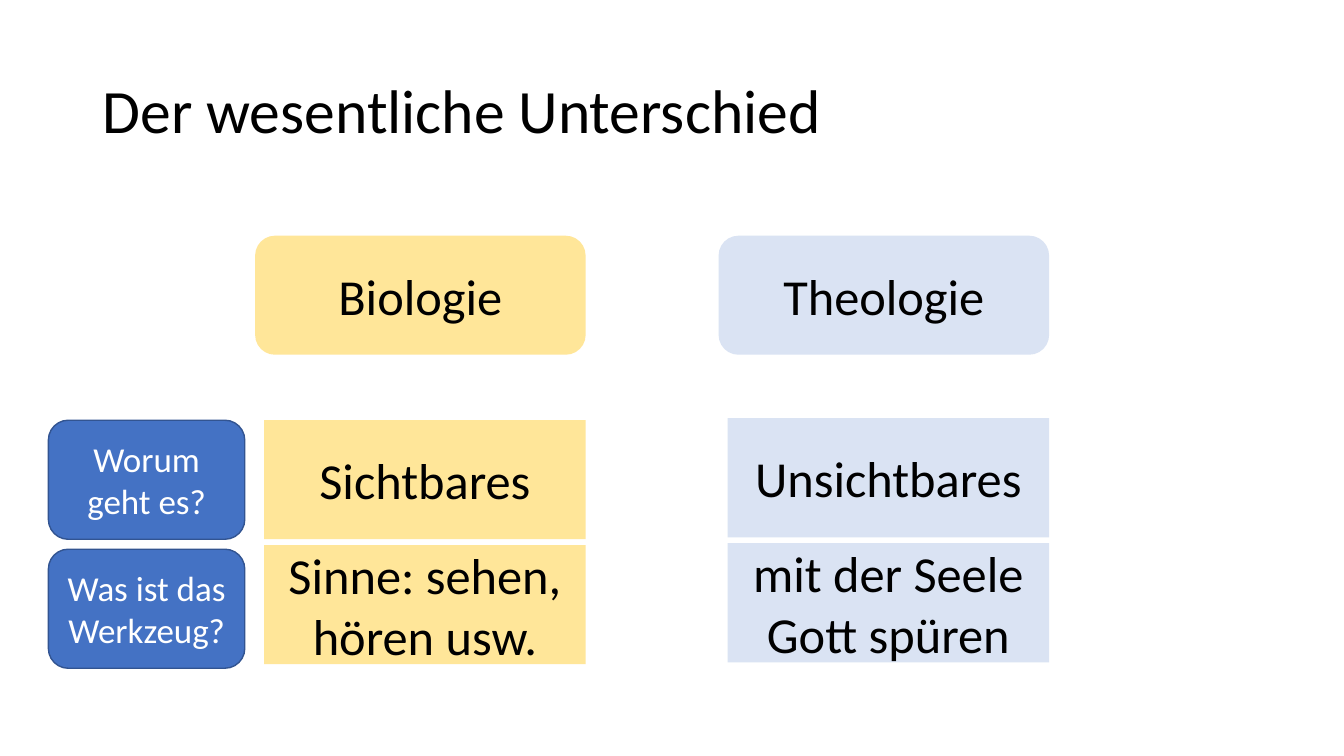
"""Build a slide that contrasts biology with theology."""
from pptx import Presentation
from pptx.dml.color import RGBColor
from pptx.enum.shapes import MSO_SHAPE
from pptx.enum.text import MSO_ANCHOR, PP_ALIGN
from pptx.util import Cm, Pt

COLORS = {
    "black": "000000",
    "white": "FFFFFF",
    "yellow": "FFE699",
    "pale": "DAE3F3",
    "blue": "4472C4",
    "edge": "325491",
}
HEIGHT = 3


def color(name):
    return RGBColor.from_string(COLORS[name])


def add_box(kind, left, top, width, text, fill, size=36, ink="black"):
    box = slide.shapes.add_shape(kind, Cm(left), Cm(top), Cm(width), Cm(HEIGHT))
    box.shadow.inherit = False
    box.fill.solid()
    box.fill.fore_color.rgb = color(fill)
    box.line.fill.background()
    frame = box.text_frame
    frame.word_wrap = True
    frame.vertical_anchor = MSO_ANCHOR.MIDDLE
    frame.text = text
    para = frame.paragraphs[0]
    para.alignment = PP_ALIGN.CENTER
    para.font.name = "Calibri"
    para.font.size = Pt(size)
    para.font.color.rgb = color(ink)
    return box


deck = Presentation()
deck.slide_width = Cm(33.87)
deck.slide_height = Cm(19.05)
slide = deck.slides.add_slide(deck.slide_layouts[5])

title = slide.shapes.title
title.left, title.top = Cm(2.33), Cm(1.01)
title.width, title.height = Cm(29.21), Cm(3.68)
title.text_frame.text = "Der wesentliche Unterschied"
title.text_frame.vertical_anchor = MSO_ANCHOR.MIDDLE
head = title.text_frame.paragraphs[0]
head.alignment = PP_ALIGN.LEFT
head.line_spacing = 0.9
head.font.name = "Calibri"
head.font.size = Pt(44)
head.font.color.rgb = color("black")

columns = [
    (6.43, 10.59, "yellow", "Biologie", ["Sichtbares", "Sinne: sehen, hören usw."]),
    (18.11, 10.54, "pale", "Theologie", ["Unsichtbares", "mit der Seele Gott spüren"]),
]
for left, top, fill, subject, answers in columns:
    add_box(MSO_SHAPE.ROUNDED_RECTANGLE, left, 5.94, 8.33, subject, fill)
    for row, answer in enumerate(answers):
        add_box(MSO_SHAPE.RECTANGLE, left + 0.23, top + row * 3.15, 8.1, answer, fill)

for row, question in enumerate(["Worum geht es?", "Was ist das Werkzeug?"]):
    label = add_box(MSO_SHAPE.ROUNDED_RECTANGLE, 1.22, 10.59 + row * 3.25, 4.95,
                    question, "blue", 25, "white")
    label.line.color.rgb = color("edge")
    label.line.width = Pt(1)

deck.save("out.pptx")
